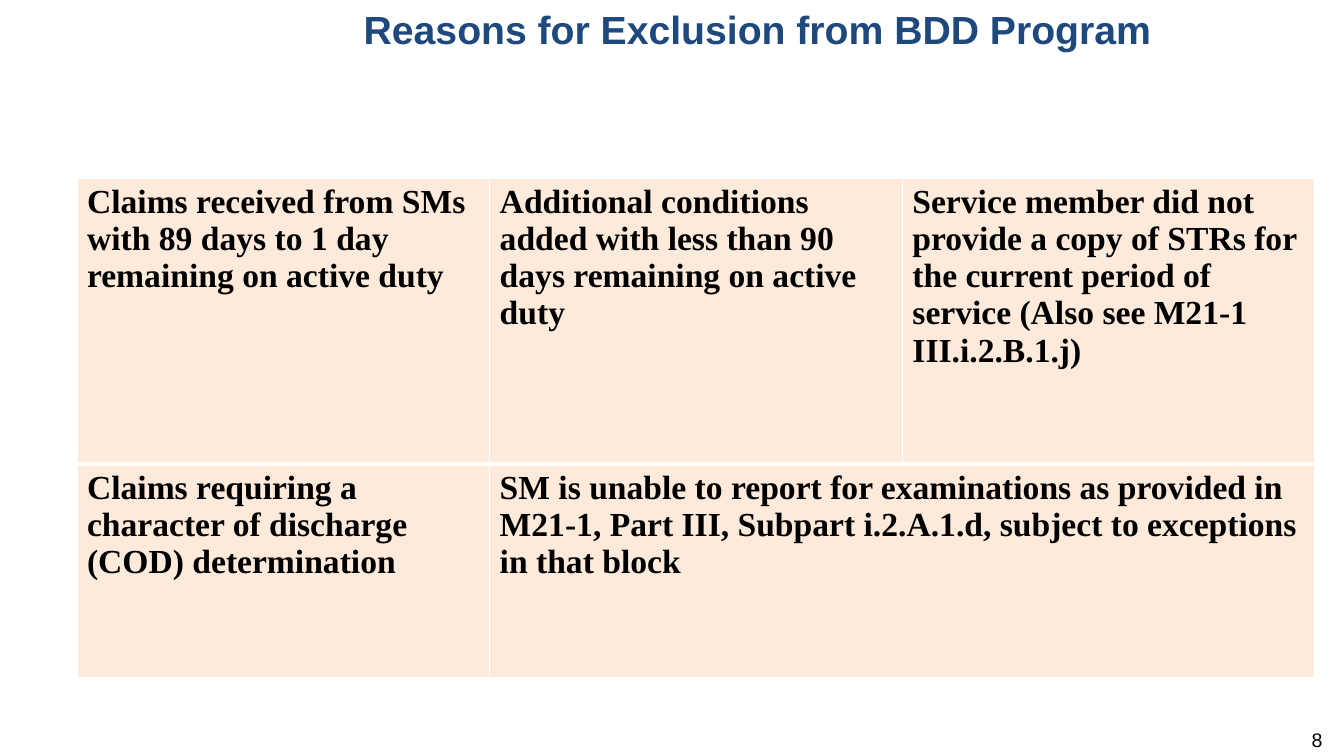
from dataclasses import dataclass

from lxml.etree import SubElement
from pptx import Presentation
from pptx.dml.color import RGBColor
from pptx.enum.text import MSO_ANCHOR, PP_ALIGN
from pptx.oxml.ns import qn
from pptx.util import Cm, Pt

WHITE, BLACK, NAVY, PEACH = "FFFFFF", "000000", "1F497D", "FDEADA"
COLUMN_WIDTH = 10.4
ROW_HEIGHTS = (7.2, 5.38)
THIN, THICK = 1, 3


@dataclass
class Reason:
    row: int
    col: int
    text: str
    span: int = 1


REASONS = [
    Reason(0, 0, "Claims received from SMs with 89 days to 1 day remaining on active duty"),
    Reason(0, 1, "Additional conditions added with less than 90 days remaining on active duty"),
    Reason(0, 2, "Service member did not provide a copy of STRs for the current period "
                 "of service (Also see M21-1 III.i.2.B.1.j)"),
    Reason(1, 0, "Claims requiring a character of discharge (COD) determination"),
    Reason(1, 1, "SM is unable to report for examinations as provided in M21-1, Part III, "
                 "Subpart i.2.A.1.d, subject to exceptions in that block", span=2),
]


def rgb(color: str) -> RGBColor:
    return RGBColor.from_string(color)


def write(tf, text: str, *, size: float, font: str = "Arial", color: str = BLACK,
          bold: bool = False, align=PP_ALIGN.LEFT, after: float = 0) -> None:
    tf.word_wrap = True
    p = tf.paragraphs[0]
    p.alignment = align
    p.space_after = Pt(after)
    r = p.add_run()
    r.text = text
    r.font.name, r.font.size, r.font.bold = font, Pt(size), bold
    r.font.color.rgb = rgb(color)


def style_cell(cell, top: float, bottom: float) -> None:
    """Draw white borders, then fill the cell."""
    tc_pr = cell._tc.get_or_add_tcPr()
    for side, width in (("L", THIN), ("R", THIN), ("T", top), ("B", bottom)):
        ln = SubElement(tc_pr, qn(f"a:ln{side}"), w=str(Pt(width)))
        SubElement(SubElement(ln, qn("a:solidFill")), qn("a:srgbClr"), val=WHITE)
    cell.fill.solid()
    cell.fill.fore_color.rgb = rgb(PEACH)


def add_title(s) -> None:
    title = s.shapes.title
    title.left, title.top, title.width, title.height = Cm(5.94), Cm(0), Cm(26.29), Cm(3.2)
    title.text_frame.vertical_anchor = MSO_ANCHOR.TOP
    write(title.text_frame, "Reasons for Exclusion from BDD Program", size=28,
          color=NAVY, bold=True, align=PP_ALIGN.CENTER)


def add_reasons(s) -> None:
    table = s.shapes.add_table(2, 3, Cm(1.94), Cm(4.5), Cm(3 * COLUMN_WIDTH),
                               Cm(sum(ROW_HEIGHTS))).table
    table.first_row = table.horz_banding = False
    for column in table.columns:
        column.width = Cm(COLUMN_WIDTH)
    for i, height in enumerate(ROW_HEIGHTS):
        table.rows[i].height = Cm(height)
        top, bottom = (THIN, THICK) if i == 0 else (THICK, THIN)
        for cell in table.rows[i].cells:
            style_cell(cell, top, bottom)
    for reason in REASONS:
        cell = table.cell(reason.row, reason.col)
        if reason.span > 1:
            cell.merge(table.cell(reason.row, reason.col + reason.span - 1))
        write(cell.text_frame, reason.text, size=24, font="Times New Roman", bold=True)


def add_page_number(s) -> None:
    tf = s.shapes.add_textbox(Cm(25.68), Cm(18.34), Cm(7.9), Cm(1.02)).text_frame
    tf.margin_top = 0
    write(tf, "8", size=14, align=PP_ALIGN.RIGHT, after=6)


def main() -> None:
    prs = Presentation()
    prs.slide_width, prs.slide_height = Cm(33.87), Cm(19.05)
    s = prs.slides.add_slide(prs.slide_layouts[5])
    add_title(s)
    add_page_number(s)
    add_reasons(s)
    prs.save("out.pptx")


if __name__ == "__main__":
    main()
